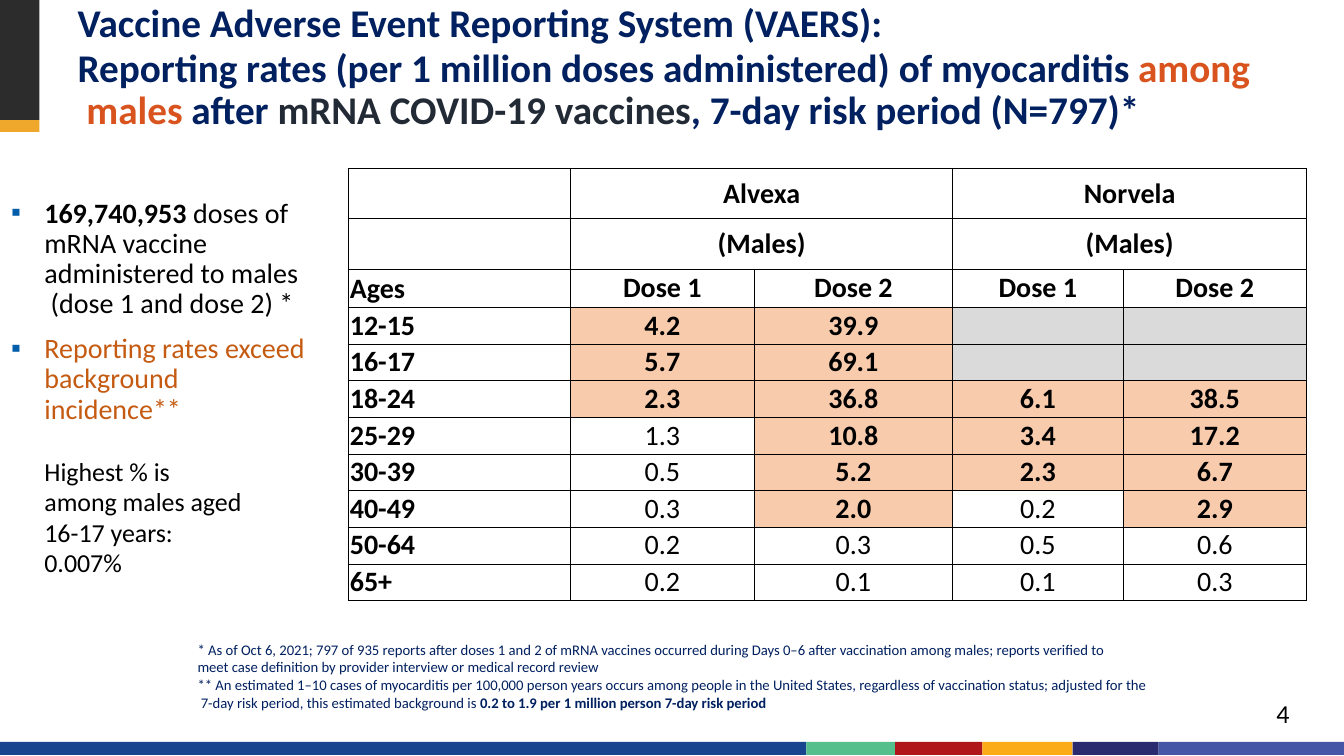
import pptx
import pptx.util
import pptx.dml.color
import pptx.enum.shapes
import pptx.enum.text
import pptx.oxml
import pptx.oxml.ns
import lxml.etree

W, H = 13.33, 7.5
NAVY, ORANGE, BLACK, PEACH, GREY = "002060", "D9531E", "000000", "F8CBAD", "DADADA"
ALIGN = pptx.enum.text.PP_ALIGN
inch, pt = pptx.util.Inches, pptx.util.Pt

RATES = [
    ("12-15", "4.2", "39.9", "", ""),
    ("16-17", "5.7", "69.1", "", ""),
    ("18-24", "2.3", "36.8", "6.1", "38.5"),
    ("25-29", "1.3", "10.8", "3.4", "17.2"),
    ("30-39", "0.5", "5.2", "2.3", "6.7"),
    ("40-49", "0.3", "2.0", "0.2", "2.9"),
    ("50-64", "0.2", "0.3", "0.5", "0.6"),
    ("65+", "0.2", "0.1", "0.1", "0.3"),
]


def rgb(value):
    return pptx.dml.color.RGBColor.from_string(value)


def add_xml(parent, tag, **attrs):
    return lxml.etree.SubElement(parent, pptx.oxml.ns.qn("a:" + tag), **attrs)


def place(sp, x, y, w, h):
    sp.left, sp.top, sp.width, sp.height = inch(x), inch(y), inch(w), inch(h)


def frame(tf, left=0, top=0.01):
    tf.word_wrap = True
    tf.auto_size = pptx.enum.text.MSO_AUTO_SIZE.NONE
    tf.vertical_anchor = pptx.enum.text.MSO_ANCHOR.TOP
    tf.margin_left, tf.margin_top = inch(left), inch(top)
    tf.margin_right = tf.margin_bottom = 0


def write(p, runs, size, color=BLACK, bold=False, spacing=None, before=0, align=ALIGN.LEFT):
    p.alignment = align
    p.space_before = pt(before)
    p.space_after = pt(0)
    if spacing:
        p.line_spacing = spacing
    font = p.font
    font.name, font.size = "Calibri", pt(size)
    if all(len(run) == 1 for run in runs):
        font.bold, font.color.rgb = bold, rgb(color)
    for text, *style in runs:
        for i, line in enumerate(text.split("\n")):
            if i:
                p.add_line_break()
            if line:
                r = p.add_run()
                r.text = line
                if style:
                    r.font.color.rgb, r.font.bold = rgb(style[0]), style[1]


def block(s, x, y, w, h, color):
    sp = s.shapes.add_shape(pptx.enum.shapes.MSO_SHAPE.RECTANGLE, inch(x), inch(y), inch(w), inch(h))
    sp.shadow.inherit = False
    sp.fill.solid()
    sp.fill.fore_color.rgb = rgb(color)
    sp.line.fill.background()


def bottom_band(s, x, y, w, h):
    segments = [(0.6, "17468F"), (0.066, "55BF8B"), (0.065, "B01519"),
                (0.067, "FBAB18"), (0.064, "292B6E"), (0.138, "4656A6")]
    for share, color in segments:
        block(s, x, y, share * w, h, color)
        x += share * w


def corner_tab(s, x, y, w, h):
    block(s, x, y, w, 0.91 * h, "2D2C2C")
    block(s, x, y + 0.91 * h, w, 0.09 * h, "F0A82C")


def title(s, x, y, w, h):
    sp = s.shapes.title
    place(sp, x, y, w, h)
    tf = sp.text_frame
    frame(tf, left=0.02)
    write(tf.paragraphs[0], [("Vaccine Adverse Event Reporting System (VAERS):",)],
          28, NAVY, True, pt(31.6))
    write(tf.add_paragraph(), [
        ("Reporting rates (per 1 million doses administered) of myocarditis ", NAVY, True),
        ("among\n males ", ORANGE, True),
        ("after ", NAVY, True),
        ("mRNA COVID-19 vaccines", "222A35", True),
        (", 7-day risk period (N=797)*", NAVY, True),
    ], 28, spacing=pt(30.4), before=1.6)


def findings(s, x, y, w, h):
    sp = s.placeholders[1]
    place(sp, x, y, w, h)
    tf = sp.text_frame
    frame(tf, top=0.05)
    items = [
        (True, [("169,740,953", BLACK, True),
                (" doses of\nmRNA vaccine\nadministered to males\n (dose 1 and dose 2) *", BLACK, False)],
         20, BLACK, 0),
        (True, [("Reporting rates exceed\nbackground incidence**",)], 20, "C55A11", 10.4),
        (False, [("Highest % is\namong males aged\n16-17 years:",)], 18.5, BLACK, 22.7),
        (False, [("0.007%",)], 18.5, BLACK, 0),
    ]
    for i, (bullet, runs, size, color, before) in enumerate(items):
        p = tf.add_paragraph() if i else tf.paragraphs[0]
        pPr = p._p.get_or_add_pPr()
        pPr.set("marL", str(inch(0.35)))
        pPr.set("indent", str(inch(-0.33 if bullet else 0)))
        if bullet:
            add_xml(add_xml(pPr, "buClr"), "srgbClr", val="005DAA")
            add_xml(pPr, "buChar", char="▪")
        else:
            add_xml(pPr, "buNone")
        write(p, runs, size, color, spacing=pt(21.6), before=before)


def style_cell(cell, fill, top=0.5, bottom=0.5):
    tcPr = cell._tc.get_or_add_tcPr()
    for side, width in (("lnL", 0.5), ("lnR", 0.5), ("lnT", top), ("lnB", bottom)):
        ln = add_xml(tcPr, side, w=str(pt(width)))
        add_xml(add_xml(ln, "solidFill"), "srgbClr", val=BLACK)
    cell.fill.solid()
    cell.fill.fore_color.rgb = rgb(fill)


def rate_table(s, x, y, w, h):
    rows = [("", "Alvexa", "", "Norvela", ""), ("", "(Males)", "", "(Males)", ""),
            ("Ages", "Dose 1", "Dose 2", "Dose 1", "Dose 2")] + RATES
    heads = [0.5, 0.5, 0.38]
    heights = heads + [(h - sum(heads)) / len(RATES)] * len(RATES)
    gf = s.shapes.add_table(len(rows), 5, inch(x), inch(y), inch(w), inch(h))
    table = gf.table
    table.first_row = table.horz_banding = False
    for column, width in zip(table.columns, (2.21, 1.82, 1.97, 1.69, 1.82)):
        column.width = inch(width)
    for i, (values, height) in enumerate(zip(rows, heights)):
        table.rows[i].height = inch(height)
        for j, text in enumerate(values):
            cell = table.cell(i, j)
            is_rate = i >= len(heads) and j > 0
            high = is_rate and text != "" and float(text) >= 2
            fill = PEACH if high else GREY if is_rate and not text else "FFFFFF"
            style_cell(cell, fill, top=1 if i == 3 and j else 0.5, bottom=1 if i == 2 and j else 0.5)
            cell.margin_left = inch(0 if j else 0.02)
            cell.margin_right = cell.margin_bottom = 0
            cell.margin_top = inch(0.08 if i < 2 else 0.01 if is_rate else 0.02 if i > 2 or j else 0.04)
            write(cell.text_frame.paragraphs[0], [(text,)] if text else [], 20,
                  bold=high or not is_rate, spacing=None if j else pt(23.8),
                  align=ALIGN.CENTER if j else ALIGN.LEFT)
    for i in range(2):
        for j in (1, 3):
            table.cell(i, j).merge(table.cell(i, j + 1))


def footnotes(s, x, y, w, h):
    tf = s.shapes.add_textbox(inch(x), inch(y), inch(w), inch(h)).text_frame
    frame(tf, left=0.01)
    write(tf.paragraphs[0], [
        ("* As of Oct 6, 2021; 797 of 935 reports after doses 1 and 2 of mRNA vaccines occurred during "
         "Days 0–6 after vaccination among males; reports verified to\n"
         "meet case definition by provider interview or medical record review",)], 10.5, NAVY, spacing=1.02)
    write(tf.add_paragraph(), [
        ("** An estimated 1–10 cases of myocarditis per 100,000 person years occurs among people in the "
         "United States, regardless of vaccination status; adjusted for the\n"
         " 7-day risk period, this estimated background is ", NAVY, False),
        ("0.2 to 1.9 per 1 million person 7-day risk period", NAVY, True)], 10.5, spacing=1.02)


def page_number(s, x, y, w, h):
    tf = s.shapes.add_textbox(inch(x), inch(y), inch(w), inch(h)).text_frame
    frame(tf, left=0.01)
    write(tf.paragraphs[0], [("4",)], 18.5)


def main():
    prs = pptx.Presentation()
    prs.slide_width, prs.slide_height = inch(W), inch(H)
    s = prs.slides.add_slide(prs.slide_layouts[1])
    bottom_band(s, 0, 7.36, W, 0.13)
    corner_tab(s, 0, 0, 0.39, 1.31)
    title(s, 0.75, 0, 11.68, 1.33)
    page_number(s, 12.65, 6.91, 0.16, 0.33)
    findings(s, 0.09, 1.92, 3.1, 3.52)
    rate_table(s, 3.45, 1.67, 9.52, 4.29)
    footnotes(s, 1.95, 6.34, 9.8, 0.73)
    prs.save("out.pptx")


if __name__ == "__main__":
    main()
